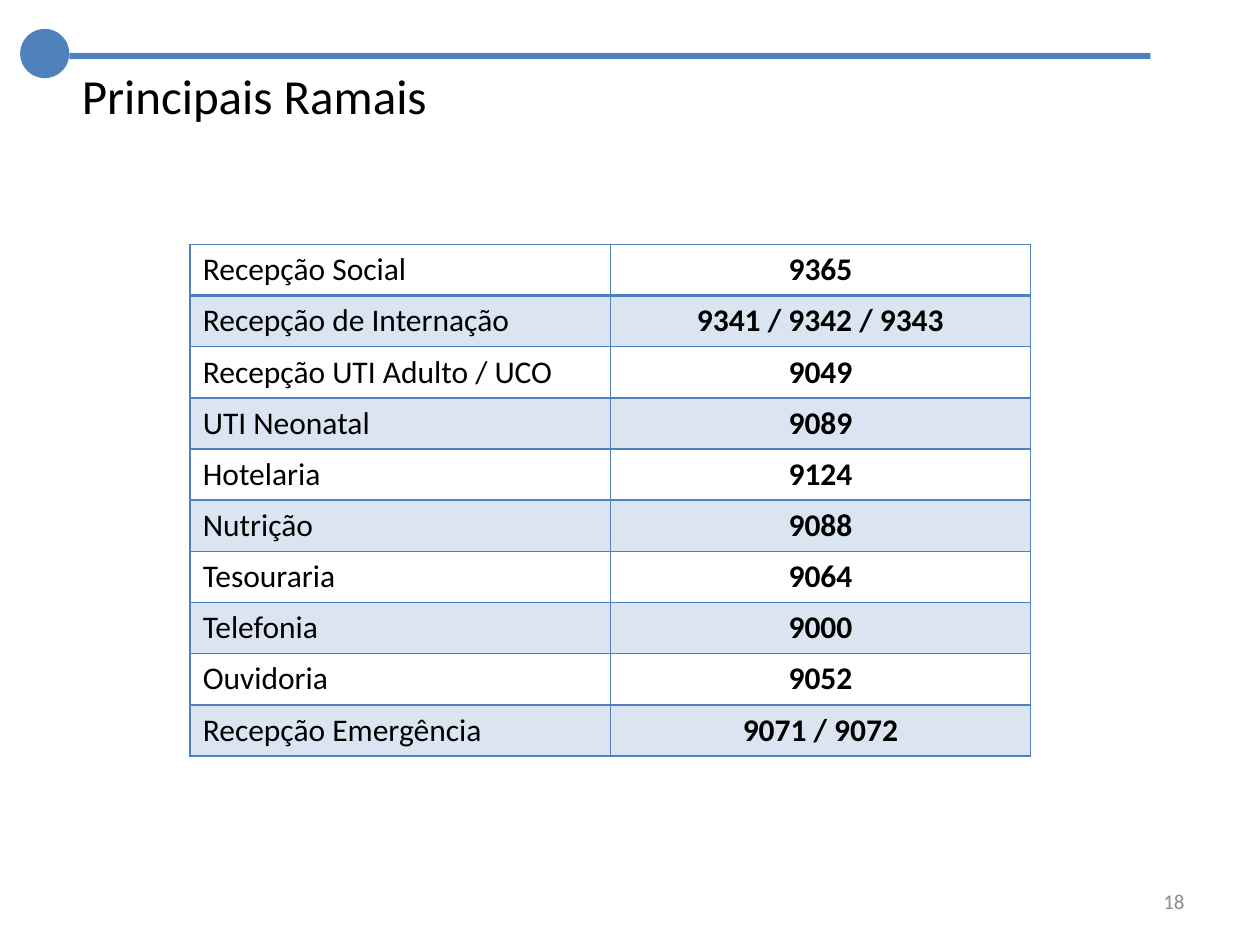
from lxml import etree
from pptx import Presentation
from pptx import util as u
from pptx.dml.color import RGBColor
from pptx.enum import shapes, text
from pptx.oxml.ns import qn

COLORS = {"blue": "4F81BD", "black": "000000", "gray": "8C8C8C"}
ROWS = [
    ("Recepção Social", "9365"),
    ("Recepção de Internação", "9341 / 9342 / 9343"),
    ("Recepção UTI Adulto / UCO", "9049"),
    ("UTI Neonatal", "9089"),
    ("Hotelaria", "9124"),
    ("Nutrição", "9088"),
    ("Tesouraria", "9064"),
    ("Telefonia", "9000"),
    ("Ouvidoria", "9052"),
    ("Recepção Emergência", "9071 / 9072"),
]
ALIGN = text.PP_ALIGN


def rgb(name):
    return RGBColor.from_string(COLORS[name])


def box(left, top, width, height):
    return [u.Inches(n) for n in (left, top, width, height)]


def write(frame, words, size=18, color="black", bold=False, align=ALIGN.LEFT):
    para = frame.paragraphs[0]
    para.alignment = align
    run = para.add_run()
    run.text = words
    font = run.font
    font.name = "Calibri"
    font.size = u.Pt(size)
    font.bold = bold
    font.color.rgb = rgb(color)


def add_mark(slide, kind, *place):
    mark = slide.shapes.add_shape(kind, *box(*place))
    mark.shadow.inherit = False
    mark.fill.solid()
    mark.fill.fore_color.rgb = rgb("blue")
    mark.line.fill.background()


def set_title(slide, words):
    title = slide.shapes.title
    title.left, title.top, title.width, title.height = box(0.55, 0.47, 3.06, 0.57)
    frame = title.text_frame
    frame.word_wrap = False
    frame.auto_size = text.MSO_AUTO_SIZE.NONE
    frame.vertical_anchor = text.MSO_ANCHOR.TOP
    write(frame, words, size=28)


def add_number(slide, words):
    frame = slide.shapes.add_textbox(*box(7.17, 6.95, 2.33, 0.4)).text_frame
    frame.word_wrap = True
    frame.vertical_anchor = text.MSO_ANCHOR.MIDDLE
    write(frame, words, size=12, color="gray", align=ALIGN.RIGHT)


def tint(cell, alpha):
    cell.fill.solid()
    cell.fill.fore_color.rgb = rgb("blue")
    color = cell._tc.tcPr.find(".//" + qn("a:srgbClr"))
    etree.SubElement(color, qn("a:alpha"), val=str(alpha * 1000))


def set_edges(cell, widths):
    props = cell._tc.get_or_add_tcPr()
    for spot, (side, width) in enumerate(zip("LRTB", widths)):
        line = etree.Element(qn("a:ln" + side), w=str(u.Pt(width)))
        fill = etree.SubElement(line, qn("a:solidFill"))
        etree.SubElement(fill, qn("a:srgbClr"), val=COLORS["blue"])
        props.insert(spot, line)


def add_grid(slide, rows):
    high = 0.406
    place = box(1.51, 1.94, 6.67, high * len(rows))
    table = slide.shapes.add_table(len(rows), 2, *place).table
    table.first_row = table.horz_banding = False
    for row, pair in enumerate(rows):
        table.rows[row].height = u.Inches(high)
        for col, words in enumerate(pair):
            cell = table.cell(row, col)
            write(cell.text_frame, words, bold=col == 1,
                  align=ALIGN.CENTER if col else ALIGN.LEFT)
            if row % 2:
                tint(cell, 20)
            else:
                cell.fill.background()
            set_edges(cell, (1, 1, 2 if row == 1 else 1, 2 if row == 0 else 1))


def main():
    deck = Presentation()
    deck.slide_width, deck.slide_height = u.Inches(10), u.Inches(7.5)
    slide = deck.slides.add_slide(deck.slide_layouts[5])
    add_mark(slide, shapes.MSO_SHAPE.OVAL, 0.16, 0.23, 0.39, 0.39)
    add_mark(slide, shapes.MSO_SHAPE.RECTANGLE, 0.55, 0.42, 8.58, 0.05)
    set_title(slide, "Principais Ramais")
    add_number(slide, "18")
    add_grid(slide, ROWS)
    deck.save("out.pptx")


if __name__ == "__main__":
    main()
